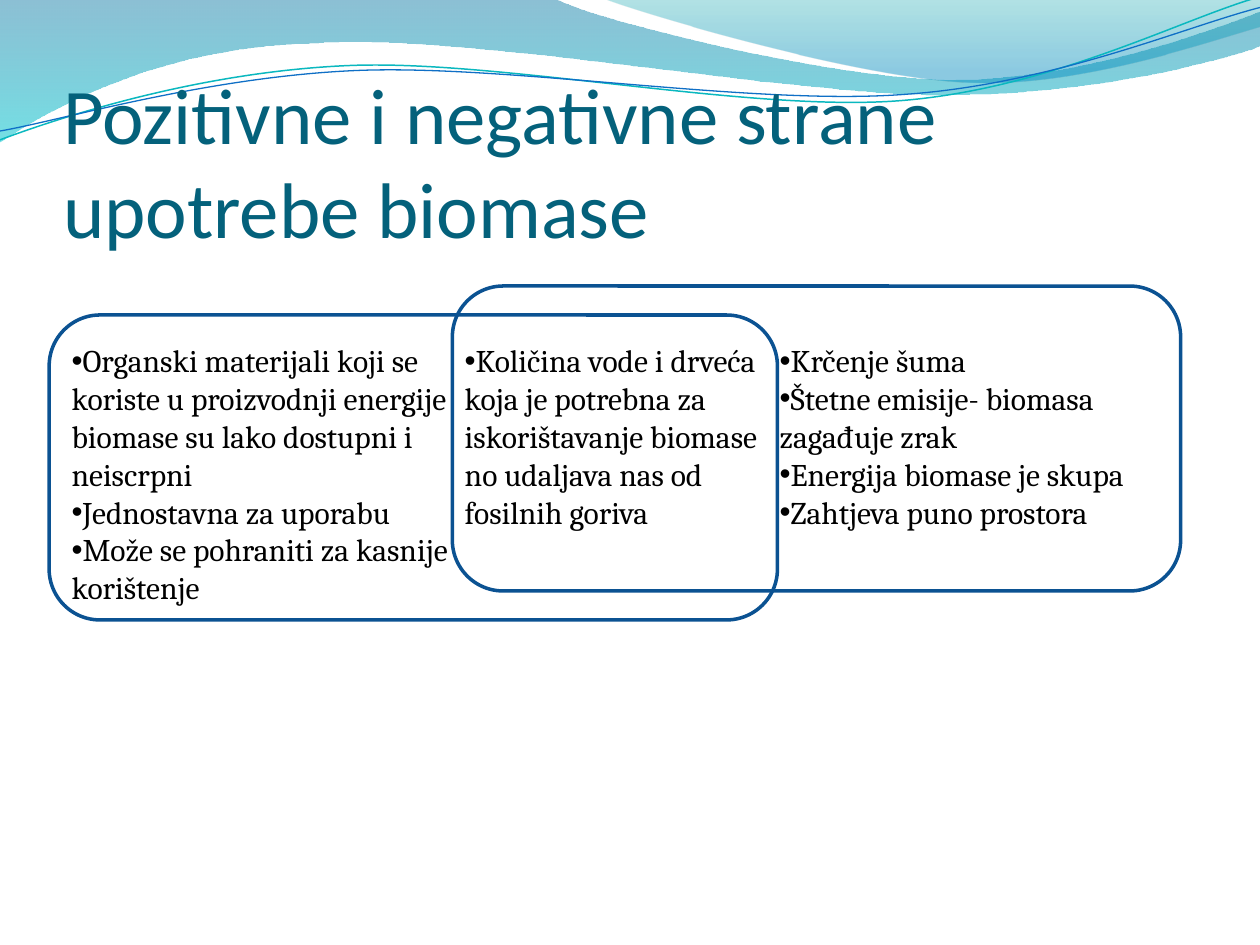
from dataclasses import dataclass
from math import cos, radians, sin

from lxml import etree
from pptx import Presentation
from pptx.dml.color import RGBColor
from pptx.enum.shapes import MSO_SHAPE
from pptx.enum.text import MSO_ANCHOR, MSO_AUTO_SIZE, PP_ALIGN
from pptx.oxml.ns import qn
from pptx.util import Inches, Pt

ROUNDED = MSO_SHAPE.ROUNDED_RECTANGLE
BOTTOM = MSO_ANCHOR.BOTTOM
NO_FIT = MSO_AUTO_SIZE.NONE
GROW = MSO_AUTO_SIZE.SHAPE_TO_FIT_TEXT
LEFT = PP_ALIGN.LEFT
TITLE_ONLY = 5


@dataclass(frozen=True)
class Theme:
    title_color: str = "04617B"
    text_color: str = "000000"
    frame_color: str = "0B5292"
    title_font: str = "Calibri"
    body_font: str = "Cambria"
    bullet_font: str = "Arial"
    title_size: int = 45
    body_size: int = 18
    frame_width: float = 2
    # Gradient stops: position, colour, opacity in percent
    wave_left: tuple = ((0, "0074A1", 45), (1, "00C6CF", 55))
    wave_right: tuple = ((0, "00A1A9", 30), (0.8, "008BBF", 45))
    # Lines: colour, width
    line_upper: tuple = ("0AB8BF", 0.85)
    line_lower: tuple = ("0F6FC6", 0.75)


THEME = Theme()

# A path is a list of steps: a pair is a straight step, six numbers a Bézier step.
WAVE_LEFT = [
    (0, 0), (4.4, -0.01),
    (4.76, 0.17, 6.64, 0.63, 7.58, 0.63),
    (8.53, 0.63, 9.58, 0.26, 10, 0.09),
    (10.01, 0.36),
    (9.83, 0.44, 8.7, 0.76, 7.46, 0.75),
    (6.22, 0.75, 3.82, 0.28, 2.57, 0.34),
    (1.29, 0.36, 0.46, 0.83, -0.01, 1.13),
    (0, 0),
]
WAVE_RIGHT = [
    (4.79, -0.01),
    (5.09, 0.11, 6.82, 0.62, 7.69, 0.65),
    (8.56, 0.69, 9.61, 0.32, 10, 0.21),
    (10, 0), (4.79, -0.01),
]
LINE_UPPER = [
    (0, 1.11),
    (0.48, 0.93, 1.58, 0.57, 2.77, 0.52),
    (3.95, 0.47, 5.93, 0.89, 7.13, 0.8),
    (8.33, 0.71, 9.38, 0.15, 9.98, -0.02),
]
LINE_LOWER = [
    (0, 1.04),
    (0.47, 0.96, 1.64, 0.61, 2.83, 0.56),
    (4.03, 0.51, 5.97, 0.84, 7.17, 0.75),
    (8.36, 0.67, 9.41, 0.21, 10, 0.06),
]
LINE_TILT = 2.7
UPPER_CENTER = (4.99, 0.58)
LOWER_CENTER = (5, 0.59)

TITLE = "Pozitivne i negativne strane upotrebe biomase"
COLUMN_TOP = 2.66
# Left, width, height, points
COLUMNS = [
    (0.47, 3.2, 2.52, [
        "Organski materijali koji se koriste u proizvodnji energije biomase su lako dostupni i neiscrpni",
        "Jednostavna za uporabu",
        "Može se pohraniti za kasnije korištenje",
    ]),
    (6.09, 3.2, 2.22, [
        "Krčenje šuma",
        "Štetne emisije- biomasa zagađuje zrak",
        "Energija biomase je skupa",
        "Zahtjeva puno prostora",
    ]),
    (3.59, 2.66, 1.62, [
        "Količina vode i drveća koja je potrebna za iskorištavanje biomase no udaljava nas od fosilnih goriva",
    ]),
]
FRAME_SIZE = (5.78, 2.42)
FRAMES = [(0.39, 2.5), (3.59, 2.27)]


def rgb(color):
    return RGBColor.from_string(color)


def pairs(step):
    return list(zip(step[::2], step[1::2]))


def turn(path, center, degrees):
    """Rotate every point of a path clockwise about center."""
    cx, cy = center
    c, s = cos(radians(degrees)), sin(radians(degrees))
    return [
        tuple(v for x, y in pairs(step)
              for v in (cx + (x - cx) * c - (y - cy) * s, cy + (x - cx) * s + (y - cy) * c))
        for step in path
    ]


def add_path(shapes, path, close):
    """Add a freeform, joining the three points of each Bézier step into one curve."""
    points = [(Inches(x), Inches(y)) for step in path for x, y in pairs(step)]
    builder = shapes.build_freeform(*points[0])
    builder.add_line_segments(points[1:], close=close)
    sp = builder.convert_to_shape()
    sp.shadow.inherit = False
    segments = iter(list(sp._element.spPr.iter(qn("a:lnTo"))))
    for step in path[1:]:
        first = next(segments)
        if len(step) == 6:
            first.tag = qn("a:cubicBezTo")
            for _ in range(2):
                segment = next(segments)
                first.append(segment[0])
                segment.getparent().remove(segment)
    return sp


def add_wave(slide, path, stops):
    sp = add_path(slide.shapes, path, close=True)
    sp.line.fill.background()
    sp.fill.gradient()
    sp.fill.gradient_angle = 270
    for stop, (position, color, _) in zip(sp.fill.gradient_stops, stops):
        stop.position = position
        stop.color.rgb = rgb(color)
    colors = sp._element.spPr.find(qn("a:gradFill")).iter(qn("a:srgbClr"))
    for color, (_, _, opacity) in zip(colors, stops):
        etree.SubElement(color, qn("a:alpha"), val=str(opacity * 1000))


def add_curve(group, path, center, style):
    color, width = style
    sp = add_path(group.shapes, turn(path, center, LINE_TILT), close=False)
    sp.rotation = -LINE_TILT
    sp.fill.background()
    sp.line.color.rgb = rgb(color)
    sp.line.width = Pt(width)


def style_font(p, name, size, color):
    p.font.name = name
    p.font.size = Pt(size)
    p.font.color.rgb = rgb(color)


def set_title(slide):
    title = slide.shapes.title
    slide.shapes._spTree.append(title._element)  # in front of the waves
    title.left, title.top = Inches(0.5), Inches(0.77)
    title.width, title.height = Inches(9), Inches(1.25)
    tf = title.text_frame
    tf.text = TITLE
    tf.word_wrap = True
    tf.auto_size = NO_FIT
    tf.vertical_anchor = BOTTOM
    tf.margin_left = tf.margin_right = tf.margin_bottom = 0
    tf.margin_top = Inches(0.05)
    p = tf.paragraphs[0]
    p.alignment = LEFT
    style_font(p, THEME.title_font, THEME.title_size, THEME.title_color)


def add_bullets(slide, left, width, height, points):
    box = slide.shapes.add_textbox(Inches(left), Inches(COLUMN_TOP), Inches(width), Inches(height))
    tf = box.text_frame
    tf.word_wrap = True
    tf.auto_size = GROW
    for i, point in enumerate(points):
        p = tf.add_paragraph() if i else tf.paragraphs[0]
        p.text = point
        style_font(p, THEME.body_font, THEME.body_size, THEME.text_color)
        pPr = p._p.get_or_add_pPr()
        pPr.insert(0, etree.Element(qn("a:buFont"), typeface=THEME.bullet_font))
        pPr.insert(1, etree.Element(qn("a:buChar"), char="•"))


def add_frame(slide, left, top):
    sp = slide.shapes.add_shape(ROUNDED, Inches(left), Inches(top), *map(Inches, FRAME_SIZE))
    sp.shadow.inherit = False
    sp.fill.background()
    sp.line.color.rgb = rgb(THEME.frame_color)
    sp.line.width = Pt(THEME.frame_width)


def main():
    prs = Presentation()
    prs.slide_width, prs.slide_height = Inches(10), Inches(7.5)
    slide = prs.slides.add_slide(prs.slide_layouts[TITLE_ONLY])
    add_wave(slide, WAVE_LEFT, THEME.wave_left)
    add_wave(slide, WAVE_RIGHT, THEME.wave_right)
    lines = slide.shapes.add_group_shape()
    add_curve(lines, LINE_UPPER, UPPER_CENTER, THEME.line_upper)
    add_curve(lines, LINE_LOWER, LOWER_CENTER, THEME.line_lower)
    set_title(slide)
    for column in COLUMNS:
        add_bullets(slide, *column)
    for frame in FRAMES:
        add_frame(slide, *frame)
    prs.save("out.pptx")


if __name__ == "__main__":
    main()
